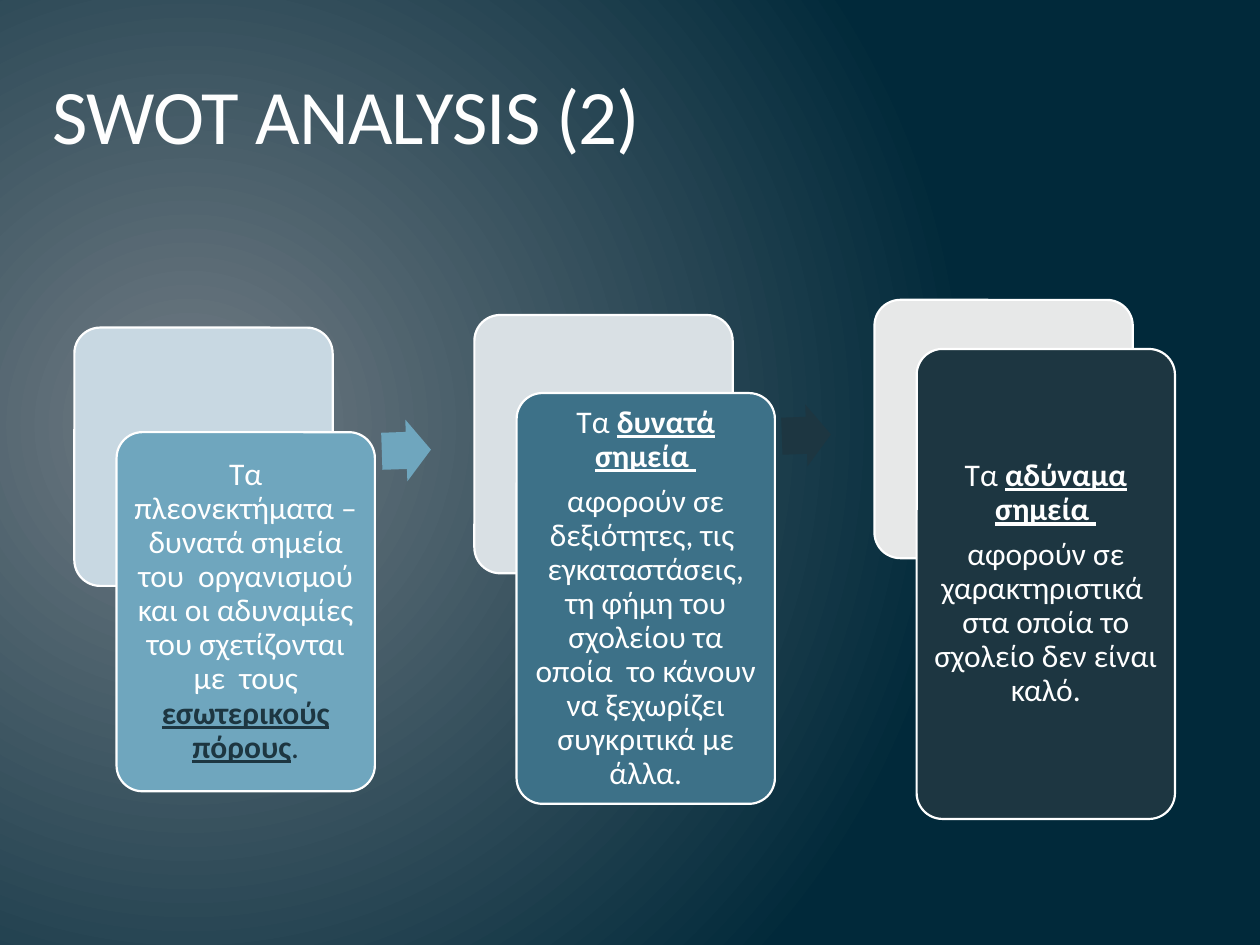
from lxml import etree
from pptx import Presentation
from pptx import util as u
from pptx.dml.color import RGBColor
from pptx.enum import shapes, text
from pptx.oxml import ns

WHITE = RGBColor(0xFF, 0xFF, 0xFF)
CREAM = RGBColor(0xFE, 0xFE, 0xFE)
GREY = RGBColor(0x71, 0x7C, 0x84)
NIGHT = RGBColor(0x01, 0x29, 0x3A)
SKY = RGBColor(0x6F, 0xA6, 0xBE)
TEAL = RGBColor(0x3D, 0x71, 0x88)
INK = RGBColor(0x1D, 0x36, 0x41)
ICE = RGBColor(0xC8, 0xD8, 0xE2)
MIST = RGBColor(0xD9, 0xE0, 0xE4)
PEARL = RGBColor(0xE7, 0xE8, 0xE8)

deck = Presentation()
deck.slide_width, deck.slide_height = u.Inches(10), u.Inches(7.5)
slide = deck.slides.add_slide(deck.slide_layouts[6])

# The slide is a grid of 100 columns by 75 rows
COL = deck.slide_width / 100
ROW = deck.slide_height / 75
STEP, SIDE, SHIFT = 31.75, 20.5, 3.35


def draw(kind, left, top, wide, high, fill, edge=None):
    """Add a flat preset shape, placed in grid columns and rows."""
    shape = slide.shapes.add_shape(
        kind, int(left * COL), int(top * ROW), int(wide * COL), int(high * ROW))
    shape.shadow.inherit = False
    shape.fill.solid()
    shape.fill.fore_color.rgb = fill
    if edge is None:
        shape.line.fill.background()
    else:
        shape.line.color.rgb = edge
        shape.line.width = u.Pt(1.25)
    return shape


def write(para, words, size, tint, **look):
    run = para.add_run()
    run.text = words
    run.font.color.rgb = tint
    form = {"name": "Calibri", "size": u.Pt(size), **look}
    for key, value in form.items():
        setattr(run.font, key, value)
    return run


# Background: a round glow left of the centre
back = slide.background.fill
back.gradient()
for stop, tint in zip(back.gradient_stops, (GREY, NIGHT)):
    stop.color.rgb = tint
grad = slide.element.find(".//" + ns.qn("a:gradFill"))
line = grad.find(ns.qn("a:lin"))
glow = etree.Element(ns.qn("a:path"), {"path": "circle"})
etree.SubElement(glow, ns.qn("a:fillToRect"),
                 {"l": "15000", "t": "50000", "r": "85000", "b": "60000"})
grad.replace(line, glow)

# Title
title = slide.shapes.add_textbox(
    int(4.2 * COL), int(5.1 * ROW), int(65.8 * COL), int(7.6 * ROW))
frame = title.text_frame
form = {"word_wrap": True, "vertical_anchor": text.MSO_ANCHOR.BOTTOM,
        "margin_left": 0, "margin_right": 0,
        "margin_top": u.Inches(0.01), "margin_bottom": 0}
for key, value in form.items():
    setattr(frame, key, value)
frame.paragraphs[0].space_before = u.Pt(1.1)
for words, gap in (("SWOT ", "-50"), ("ANALYSIS (2)", "-60")):
    run = write(frame.paragraphs[0], words, 44, CREAM)
    run.font.fill.solid()
    run.font.color.rgb = CREAM
    run.font._element.set("spc", gap)

# Steps: back tile, its top, card, its top and height, paragraphs of (words, strong)
steps = [
    (ICE, 26, SKY, 34.3, 28.5, [
        [("Τα πλεονεκτήματα – δυνατά σημεία του  οργανισμού και οι αδυναμίες "
          "του σχετίζονται με  τους ", WHITE, False),
         ("εσωτερικούς πόρους", INK, True), (".", INK, False)]]),
    (MIST, 25, TEAL, 31.2, 32.6, [
        [("Τα ", WHITE, False), ("δυνατά σημεία ", WHITE, True)],
        [("αφορούν σε δεξιότητες, τις  εγκαταστάσεις, τη φήμη του σχολείου τα "
          "οποία  το κάνουν να ξεχωρίζει συγκριτικά με άλλα.", WHITE, False)]]),
    (PEARL, 23.8, INK, 27.7, 37.3, [
        [("Τα ", WHITE, False), ("αδύναμα σημεία ", WHITE, True)],
        [("αφορούν σε χαρακτηριστικά  στα οποία το σχολείο δεν είναι καλό.",
          WHITE, False)]]),
]
ROUND = shapes.MSO_SHAPE.ROUNDED_RECTANGLE
pad = u.Inches(0.07)
form = {"word_wrap": True, "vertical_anchor": text.MSO_ANCHOR.MIDDLE,
        "margin_left": pad, "margin_right": pad,
        "margin_top": pad, "margin_bottom": pad}
style = {"alignment": text.PP_ALIGN.CENTER, "line_spacing": 0.9,
         "space_after": u.Pt(6.3)}
for i, (pale, top, deep, low, high, paras) in enumerate(steps):
    left = 5.9 + i * STEP
    tile = draw(ROUND, left, top, SIDE, SIDE, pale, WHITE)
    card = draw(ROUND, left + SHIFT, low, SIDE, high, deep, WHITE)
    for shape in (tile, card):
        shape.adjustments[0] = 0.1
    frame = card.text_frame
    for key, value in form.items():
        setattr(frame, key, value)
    for n, runs in enumerate(paras):
        para = frame.add_paragraph() if n else frame.paragraphs[0]
        for key, value in style.items():
            setattr(para, key, value)
        for words, tint, strong in runs:
            write(para, words, 18, tint, bold=strong, underline=strong)

# Arrows between the steps
for i, (top, tint, turn) in enumerate(((33.3, SKY, 358.1), (32.1, INK, 357.9))):
    arrow = draw(shapes.MSO_SHAPE.RIGHT_ARROW, 30.3 + i * STEP, top, 3.9, 4.9, tint)
    arrow.adjustments[0] = 0.6
    arrow.adjustments[1] = 0.5
    arrow.rotation = turn

deck.save("out.pptx")
